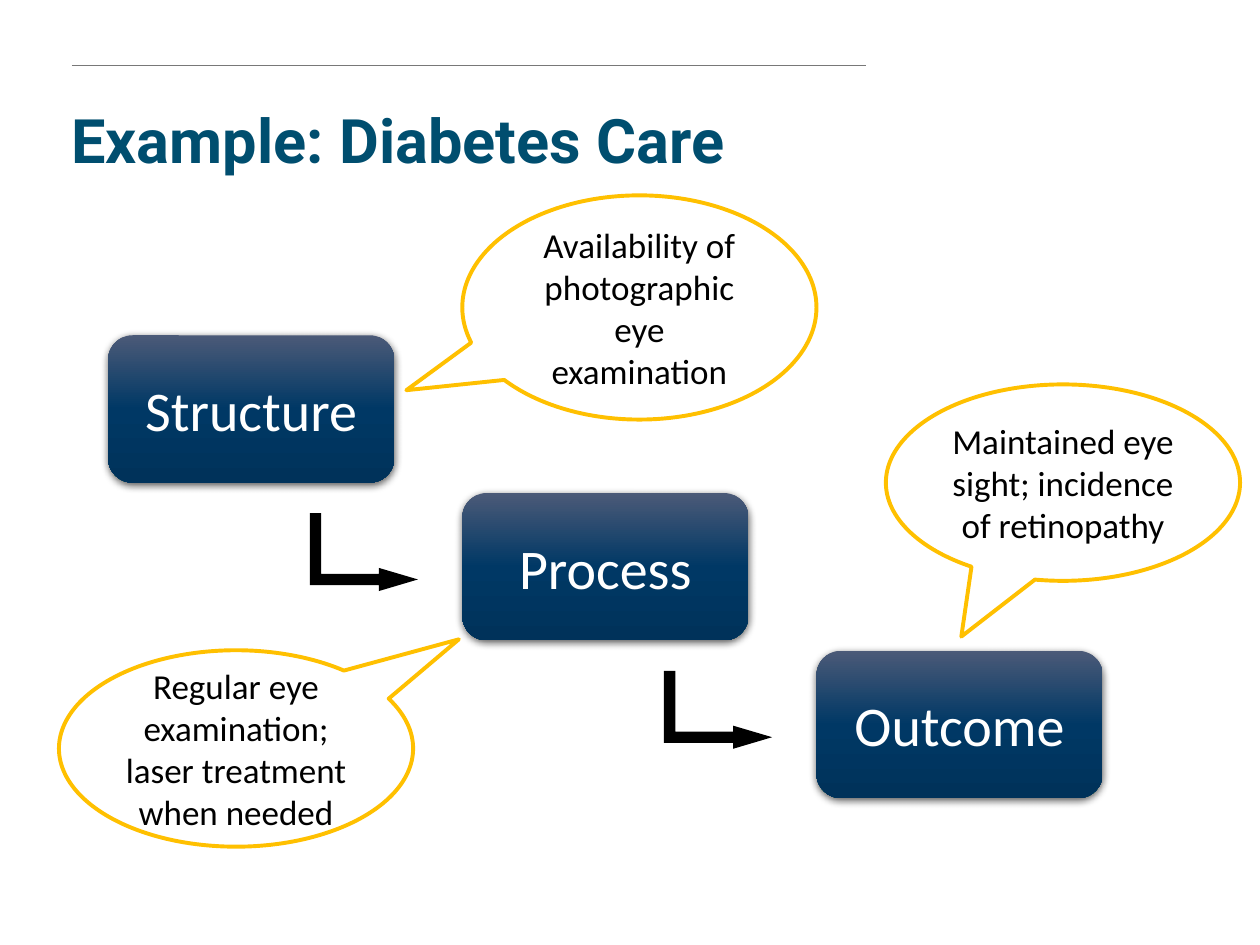
from lxml import etree
from pptx import Presentation
from pptx.dml.color import RGBColor
from pptx.enum.shapes import MSO_CONNECTOR, MSO_SHAPE
from pptx.enum.text import MSO_ANCHOR, PP_ALIGN
from pptx.oxml import parse_xml
from pptx.oxml.ns import qn
from pptx.util import Cm, Pt

ROUNDED = MSO_SHAPE.ROUNDED_RECTANGLE
CALLOUT = MSO_SHAPE.OVAL_CALLOUT
BENT_ARROW = MSO_SHAPE.BENT_UP_ARROW
STRAIGHT = MSO_CONNECTOR.STRAIGHT
LEFT, CENTER = PP_ALIGN.LEFT, PP_ALIGN.CENTER
TOP, MIDDLE = MSO_ANCHOR.TOP, MSO_ANCHOR.MIDDLE

COLORS = {
    "rule": "787878", "title": "004E6F", "callout": "FFC000",
    "black": "000000", "white": "FFFFFF",
    "box_top": "4B5A78", "box_mid": "003865", "box_bottom": "00325A",
}
NS = 'xmlns:a="http://schemas.openxmlformats.org/drawingml/2006/main"'


def rgb(name):
    return RGBColor.from_string(COLORS[name])


class SlideBuilder:
    body_font = "Calibri"
    title_font = "Roboto"

    def __init__(self, slide):
        self.slide = slide

    def label(self, sp, text, size, color, font=None, bold=False, align=CENTER, anchor=MIDDLE):
        tf = sp.text_frame
        tf.text = text
        tf.word_wrap = True
        tf.vertical_anchor = anchor
        p = tf.paragraphs[0]
        p.alignment = align
        f = p.runs[0].font
        f.name, f.size, f.bold = font or self.body_font, Pt(size), bold
        f.color.rgb = rgb(color)
        return p

    def shape(self, kind, x, y, w, h, adjustments):
        sp = self.slide.shapes.add_shape(kind, Cm(x), Cm(y), Cm(w), Cm(h))
        sp.shadow.inherit = False
        for i, value in enumerate(adjustments):
            sp.adjustments[i] = value
        return sp

    def rule(self, x1, x2, y):
        line = self.slide.shapes.add_connector(STRAIGHT, Cm(x1), Cm(y), Cm(x2), Cm(y))
        line.line.color.rgb = rgb("rule")
        line.line.width = Pt(0.75)
        etree.SubElement(line._element.spPr, qn("a:effectLst"))

    def title(self, text, x, y, w, h):
        sp = self.slide.shapes.add_textbox(Cm(x), Cm(y), Cm(w), Cm(h))
        p = self.label(sp, text, 35, "title", self.title_font, True, LEFT, TOP)
        p.line_spacing = 0.9

    def box(self, text, x, y, w, h):
        sp = self.shape(ROUNDED, x, y, w, h, [0.167])
        sp.line.fill.background()
        self.label(sp, text, 32, "white")
        # Three-stop gradient from top to bottom, and a soft shadow
        stops = "".join(
            f'<a:gs pos="{pos}"><a:srgbClr val="{COLORS[name]}"/></a:gs>'
            for pos, name in ((0, "box_top"), (50000, "box_mid"), (100000, "box_bottom")))
        sp_pr = sp._element.spPr
        sp_pr.find(qn("a:prstGeom")).addnext(parse_xml(
            f'<a:gradFill {NS} rotWithShape="1"><a:gsLst>{stops}</a:gsLst>'
            '<a:lin ang="5400000" scaled="0"/></a:gradFill>'))
        sp_pr.find(qn("a:effectLst")).append(parse_xml(
            f'<a:outerShdw {NS} blurRad="{Pt(4.5)}" dist="{Pt(1.5)}" dir="5400000" '
            f'rotWithShape="0"><a:srgbClr val="{COLORS["black"]}">'
            '<a:alpha val="63000"/></a:srgbClr></a:outerShdw>'))

    def callout(self, text, x, y, w, h, tip):
        sp = self.shape(CALLOUT, x, y, w, h, tip)
        sp.fill.background()
        sp.line.color.rgb = rgb("callout")
        sp.line.width = Pt(2.25)
        self.label(sp, text, 20, "black")

    def arrow(self, x, y, w, h):
        sp = self.shape(BENT_ARROW, x, y, w, h, [0.146, 0.148, 0.5])
        sp.rotation = 90
        sp.fill.solid()
        sp.fill.fore_color.rgb = rgb("black")
        sp.line.fill.background()


def main():
    prs = Presentation()
    prs.slide_width, prs.slide_height = Cm(25.4), Cm(19.05)
    s = SlideBuilder(prs.slides.add_slide(prs.slide_layouts[6]))

    # Heading
    s.rule(1.45, 17.45, 1.32)
    s.title("Example: Diabetes Care", 1.19, 2.11, 18.36, 2.11)

    # Descending steps, with an arrow from each to the next
    left, top, step_x, step_y = 2.18, 6.76, 7.14, 3.18
    steps = ["Structure", "Process", "Outcome"]
    for i, name in enumerate(steps):
        x, y = left + i * step_x, top + i * step_y
        s.box(name, x, y, 5.77, 2.97)
        if i < len(steps) - 1:
            s.arrow(x + 4.37, y + 3.28, 1.57, 2.18)

    # Callouts with an example for each step
    for text, x, y, h, tip in (
        ("Availability of photographic eye examination", 9.32, 3.94, 4.52, (-0.658, 0.369)),
        ("Maintained eye sight; incidence of retinopathy", 17.86, 7.75, 3.96, (-0.287, 0.784)),
        ("Regular eye examination; laser treatment when needed", 1.19, 13.11, 3.96,
         (0.629, -0.556)),
    ):
        s.callout(text, x, y, 7.14, h, tip)

    prs.save("out.pptx")


if __name__ == "__main__":
    main()
